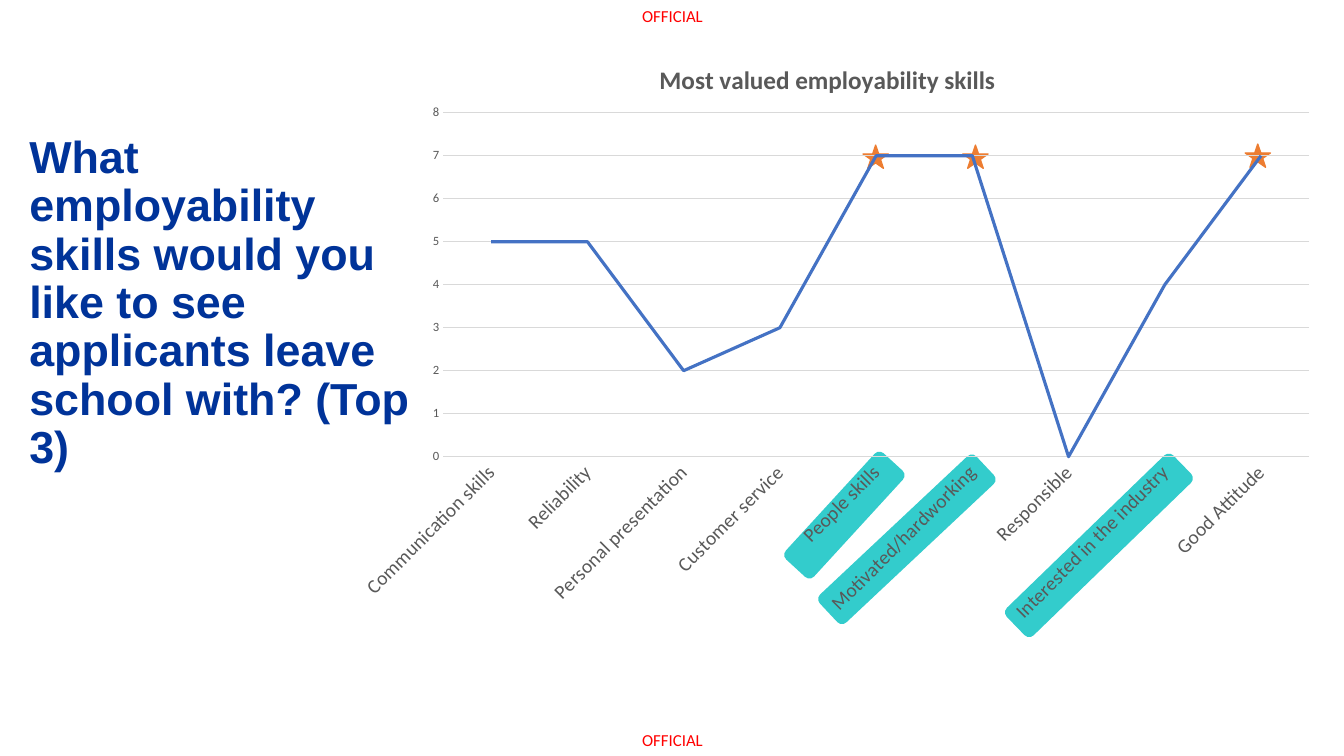
"""Build the slide on the most valued employability skills."""
from typing import NamedTuple

from lxml import etree
from pptx import Presentation
from pptx import util as u
from pptx.chart.data import CategoryChartData
from pptx.dml.color import RGBColor
from pptx.enum import chart as ch, shapes, text
from pptx.oxml.ns import qn

HUES = {"blue": "003399", "red": "FF0000", "teal": "33CCCC", "star": "ED7D31",
        "line": "4472C4", "grey": "595959", "grid": "D9D9D9"}
SKILLS = {"Communication skills": 5, "Reliability": 5,
          "Personal presentation": 2, "Customer service": 3,
          "People skills": 7, "Motivated/hardworking": 7, "Responsible": 0,
          "Interested in the industry": 4, "Good Attitude": 7}
PLOT = {"x": 0.101, "y": 0.119, "w": 0.899, "h": 0.565}


class Mark(NamedTuple):
    """A plain shape that stresses a skill."""
    kind: shapes.MSO_SHAPE
    hue: str
    left: float
    top: float
    width: float
    height: float
    turn: float = 0
    edge: float = 0


BAR, STAR = shapes.MSO_SHAPE.ROUNDED_RECTANGLE, shapes.MSO_SHAPE.STAR_5_POINT
MARKS = [
    Mark(BAR, "teal", 9.75, 5.22, 2.3, 0.38, 315.9),
    Mark(BAR, "teal", 7.93, 5.16, 2.13, 0.38, 316.8),
    Mark(BAR, "teal", 7.66, 4.92, 1.43, 0.38, 312.5),
    *(Mark(STAR, "star", left, top, 0.25, 0.23, edge=1)
      for left, top in ((8.56, 1.44), (9.55, 1.44), (12.35, 1.43))),
]


def tint(name: str) -> RGBColor:
    """Return the named colour."""
    return RGBColor.from_string(HUES[name])


def style(font, face: str, size: float, hue: str, bold: bool = False) -> None:
    """Set face, size, colour and weight of a font."""
    font.name, font.size, font.bold = face, u.Pt(size), bold
    font.color.rgb = tint(hue)


def stroke(line, hue: str, width: float) -> None:
    """Set colour and width of a line."""
    line.color.rgb = tint(hue)
    line.width = u.Pt(width)


def add_label(slide, top: float) -> None:
    """Add one classification label."""
    frame = slide.shapes.add_textbox(
        u.Inches(6.2), u.Inches(top), u.Inches(0.94), u.Inches(0.32)).text_frame
    frame.margin_left = frame.margin_right = 0
    frame.margin_top = frame.margin_bottom = 0
    frame.word_wrap = True
    frame.vertical_anchor = text.MSO_ANCHOR.MIDDLE
    para = frame.paragraphs[0]
    para.text, para.alignment = "OFFICIAL", text.PP_ALIGN.CENTER
    style(para.font, "Calibri", 12, "red")


def add_mark(slide, mark: Mark) -> None:
    """Add one highlight bar or star."""
    shape = slide.shapes.add_shape(
        mark.kind, u.Inches(mark.left), u.Inches(mark.top),
        u.Inches(mark.width), u.Inches(mark.height))
    shape.shadow.inherit = False
    shape.rotation = mark.turn
    shape.fill.solid()
    shape.fill.fore_color.rgb = tint(mark.hue)
    if mark.edge:
        stroke(shape.line, mark.hue, mark.edge)
    else:
        shape.line.fill.background()


def place_plot(area) -> None:
    """Fix the inner plot area as shares of the chart."""
    for old in area.findall(qn("c:layout")):
        area.remove(old)
    layout = etree.Element(qn("c:layout"))
    area.insert(0, layout)
    manual = etree.SubElement(layout, qn("c:manualLayout"))
    parts = {"layoutTarget": "inner", "xMode": "edge", "yMode": "edge", **PLOT}
    for tag, val in parts.items():
        etree.SubElement(manual, qn(f"c:{tag}")).set("val", str(val))


def add_graph(slide) -> None:
    """Add the line chart of skills."""
    data = CategoryChartData()
    data.categories = list(SKILLS)
    data.add_series("Series 1", list(SKILLS.values()))
    chart = slide.shapes.add_chart(
        ch.XL_CHART_TYPE.LINE, u.Inches(3.43), u.Inches(0.4),
        u.Inches(9.56), u.Inches(6.04), data).chart
    chart.font.name, chart.font.size = "Calibri", u.Pt(10)
    chart.has_legend = False
    chart.has_title = True
    head = chart.chart_title.text_frame.paragraphs[0]
    head.text = "Most valued employability skills"
    style(head.font, "Calibri", 18, "grey", True)
    chart.chart_title.include_in_layout = False
    cats, vals = chart.category_axis, chart.value_axis
    for axis, size in ((cats, 14), (vals, 9)):
        axis.major_tick_mark = axis.minor_tick_mark = ch.XL_TICK_MARK.NONE
        style(axis.tick_labels.font, "Calibri", size, "grey")
    stroke(cats.format.line, "grid", 0.75)
    body = cats._element.find(qn("c:txPr")).find(qn("a:bodyPr"))
    body.set("rot", "-2700000")
    body.set("vert", "horz")
    vals.minimum_scale, vals.maximum_scale, vals.major_unit = 0, 8, 1
    vals.format.line.fill.background()
    vals.has_major_gridlines = True
    stroke(vals.major_gridlines.format.line, "grid", 0.75)
    plot = chart.plots[0]
    plot.vary_by_categories = False
    line = plot.series[0]
    line.smooth = False
    line.marker.style = ch.XL_MARKER_STYLE.NONE
    stroke(line.format.line, "line", 2.25)
    place_plot(chart._chartSpace.chart.plotArea)


def set_title(slide) -> None:
    """Place and format the question."""
    title = slide.shapes.title
    title.left, title.top = u.Inches(0.19), u.Inches(1.27)
    title.width, title.height = u.Inches(4.04), u.Inches(3.49)
    frame = title.text_frame
    frame.word_wrap = True
    frame.auto_size = text.MSO_AUTO_SIZE.NONE
    frame.vertical_anchor = text.MSO_ANCHOR.MIDDLE
    para = frame.paragraphs[0]
    para.text = ("What employability skills would you like to see "
                 "applicants leave school with? (Top 3)")
    para.alignment, para.line_spacing = text.PP_ALIGN.LEFT, 0.9
    style(para.font, "Arial", 32, "blue", True)


def main() -> None:
    """Build and save the deck."""
    deck = Presentation()
    deck.slide_width, deck.slide_height = u.Inches(13.33), u.Inches(7.5)
    slide = deck.slides.add_slide(deck.slide_layouts[5])
    set_title(slide)
    for top in (7.18, 0):
        add_label(slide, top)
    for mark in MARKS:
        add_mark(slide, mark)
    add_graph(slide)
    deck.save("out.pptx")


if __name__ == "__main__":
    main()
